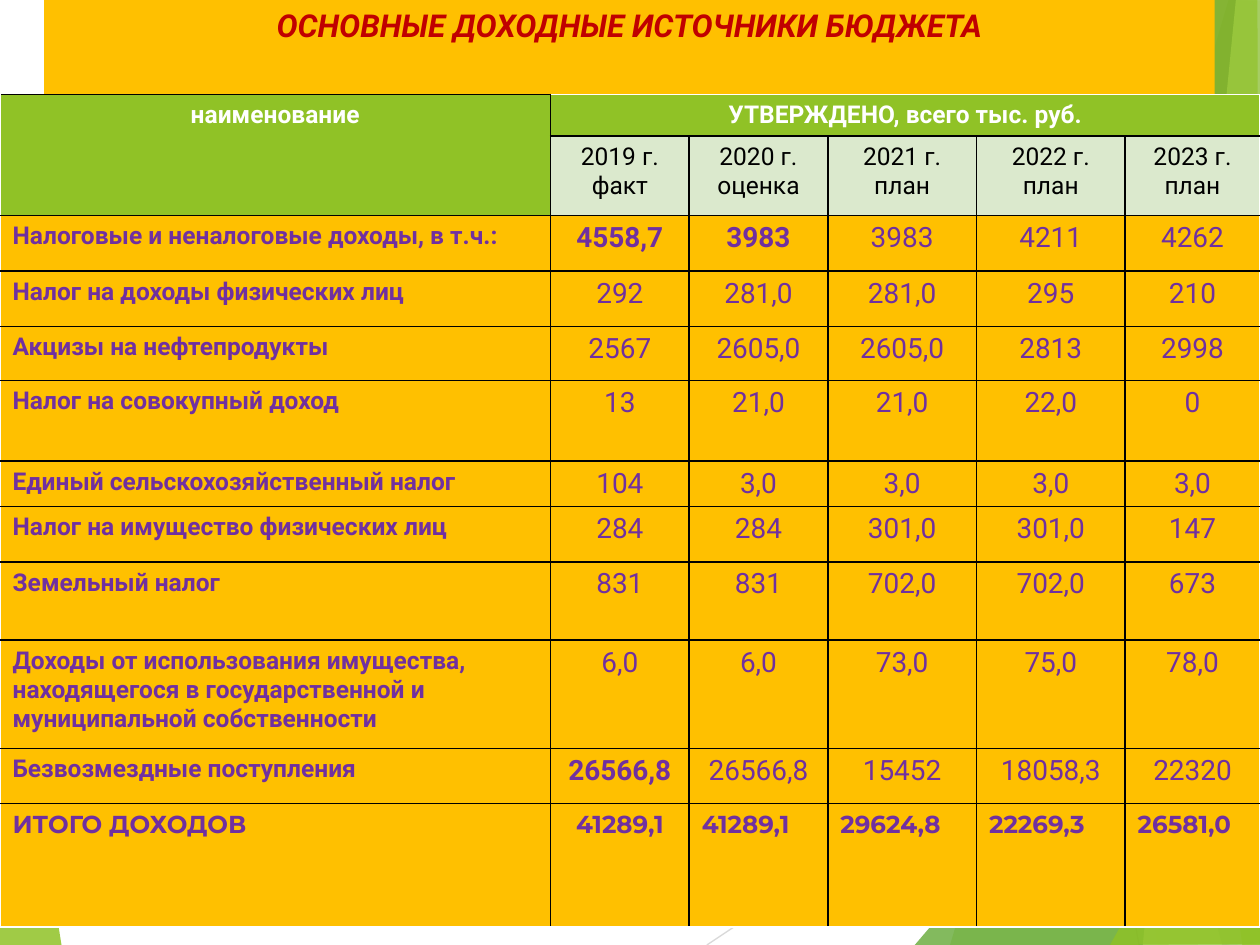
from lxml import etree
from pptx import Presentation, util as u
from pptx.dml.color import RGBColor
from pptx.enum import shapes, text
from pptx.oxml.ns import qn

Inches, Pt = u.Inches, u.Pt
GREEN, GOLD, PALE = "90C226", "FFC000", "DBE9CD"
PURPLE, BLACK, WHITE = "7030A0", "000000", "FFFFFF"


def color(value):
    return RGBColor.from_string(value)


def style_text(paragraph, size, font_color, bold, centered=True, name="Roboto"):
    paragraph.alignment = text.PP_ALIGN.CENTER if centered else text.PP_ALIGN.LEFT
    for run in paragraph.runs:
        run.font.name, run.font.size, run.font.bold = name, Pt(size), bold
        run.font.color.rgb = color(font_color)


presentation = Presentation()
presentation.slide_width, presentation.slide_height = Inches(10), Inches(7.5)
slide = presentation.slides.add_slide(presentation.slide_layouts[5])

# Background: two thin lines and translucent facets
for x1, y1, x2, y2, line_color in [
    (5.61, 7.5, 10.01, 4.57, "D9D9D9"),
    (7.7, 0, 9.04, 7.5, "BFBFBF"),
]:
    connector = slide.shapes.add_connector(
        shapes.MSO_CONNECTOR.STRAIGHT, Inches(x1), Inches(y1), Inches(x2), Inches(y2))
    connector.line.color.rgb = color(line_color)
    connector.line.width = Pt(0.75)
    etree.SubElement(connector._element.spPr, qn("a:effectLst"))

facets = [  # colour, opacity in percent, corners
    (GREEN, 85, [(-0.01, 4.39), (0.49, 7.51), (-0.01, 7.5)]),
    (GREEN, 30, [(9.75, 0), (7.54, 7.5), (10.02, 7.51), (10.01, 0.01)]),
    (GREEN, 20, [(7.88, -0.01), (9.19, 7.5), (10.01, 7.5), (10.01, -0.01)]),
    ("54A021", 72, [(7.26, 7.5), (10, 4.29), (10.01, 7.5)]),
    ("3F7819", 70, [(7.67, -0.01), (9.7, 7.5), (10.01, 7.49), (10.01, -0.01)]),
    ("C0E474", 70, [(9.81, -0.01), (9.07, 7.5), (10.01, 7.5), (10, -0.01)]),
    (GREEN, 65, [(8.83, -0.01), (9.86, 7.5), (10, 7.5), (9.98, -0.01)]),
    (GREEN, 80, [(8.81, 7.5), (10.01, 5.35), (10.01, 7.49)]),
]
for fill_color, opacity, corners in facets:
    points = [(Inches(x), Inches(y)) for x, y in corners]
    builder = slide.shapes.build_freeform(*points[0])
    builder.add_line_segments(points[1:], close=True)
    facet = builder.convert_to_shape()
    facet.shadow.inherit = False
    facet.line.fill.background()
    facet.fill.solid()
    facet.fill.fore_color.rgb = color(fill_color)
    fill_element = facet._element.spPr.find(qn("a:solidFill"))[0]
    etree.SubElement(fill_element, qn("a:alpha"), val=str(opacity * 1000))

# Title band, brought in front of the facets
title = slide.shapes.title
slide.shapes._spTree.append(title._element)
title.left, title.top = Inches(0.35), Inches(0)
title.width, title.height = Inches(9.29), Inches(0.75)
title.fill.solid()
title.fill.fore_color.rgb = color(GOLD)
title.text_frame.text = "ОСНОВНЫЕ ДОХОДНЫЕ ИСТОЧНИКИ БЮДЖЕТА"
title.text_frame.vertical_anchor = text.MSO_ANCHOR.TOP
title.text_frame.auto_size = text.MSO_AUTO_SIZE.NONE
style_text(title.text_frame.paragraphs[0], 18, "C00000", True)
title.text_frame.paragraphs[0].runs[0].font.italic = True

# Budget table
rows = [
    ["наименование", "УТВЕРЖДЕНО, всего тыс. руб.", "", "", "", ""],
    ["", "2019 г. факт", "2020 г. оценка", "2021 г. план", "2022 г. план", "2023 г. план"],
    ["Налоговые и неналоговые доходы, в т.ч.:", "4558,7", "3983", "3983", "4211", "4262"],
    ["Налог на доходы физических лиц", "292", "281,0", "281,0", "295", "210"],
    ["Акцизы на нефтепродукты", "2567", "2605,0", "2605,0", "2813", "2998"],
    ["Налог на совокупный доход", "13", "21,0", "21,0", "22,0", "0"],
    ["Единый сельскохозяйственный налог", "104", "3,0", "3,0", "3,0", "3,0"],
    ["Налог на имущество физических лиц", "284", "284", "301,0", "301,0", "147"],
    ["Земельный налог", "831", "831", "702,0", "702,0", "673"],
    ["Доходы от использования имущества, находящегося в государственной "
     "и муниципальной собственности", "6,0", "6,0", "73,0", "75,0", "78,0"],
    ["Безвозмездные поступления", "26566,8", "26566,8", "15452", "18058,3", "22320"],
    ["ИТОГО ДОХОДОВ", "41289,1", "41289,1", "29624,8", "22269,3", "26581,0"],
]
widths = [4.37, 1.1, 1.1, 1.18, 1.18, 1.07]
heights = [0.33, 0.63, 0.44, 0.44, 0.43, 0.64, 0.36, 0.44, 0.62, 0.86, 0.44, 0.98]
bold_values = {(2, 1), (2, 2), (10, 1)}
last_row, last_column = len(rows) - 1, len(widths) - 1

table = slide.shapes.add_table(
    len(rows), len(widths), Inches(0), Inches(0.75),
    Inches(sum(widths)), Inches(sum(heights))).table
for column, width in zip(table.columns, widths):
    column.width = Inches(width)
for row, height in zip(table.rows, heights):
    row.height = Inches(height)
table.cell(0, 0).merge(table.cell(1, 0))
table.cell(0, 1).merge(table.cell(0, last_column))

for r, values in enumerate(rows):
    for c, value in enumerate(values):
        cell = table.cell(r, c)
        white_sides = {
            "lnL": c == 0,
            "lnR": c == last_column or (r == 0 and c > 0),
            "lnT": r == 0 and c > 0,
            "lnB": r == last_row,
        }
        for side, is_white in white_sides.items():
            border = etree.SubElement(
                cell._tc.get_or_add_tcPr(), qn(f"a:{side}"), w=str(Pt(1)))
            border_fill = etree.SubElement(border, qn("a:solidFill"))
            etree.SubElement(border_fill, qn("a:srgbClr"), val=WHITE if is_white else BLACK)

        is_header = r == 0 or (r == 1 and c == 0)
        is_total = r == last_row
        cell.fill.solid()
        cell.fill.fore_color.rgb = color(GREEN if is_header else PALE if r == 1 else GOLD)
        if not value:
            continue
        cell.text_frame.text = value
        style_text(
            cell.text_frame.paragraphs[0],
            size=14 if r < 2 or c == 0 or is_total else 16,
            font_color=WHITE if is_header else BLACK if r == 1 else PURPLE,
            bold=is_header or is_total or c == 0 or (r, c) in bold_values,
            centered=r < 2 or (c == 1 if is_total else c > 0),
            name="Montserrat" if is_total else "Roboto")

presentation.save("out.pptx")
